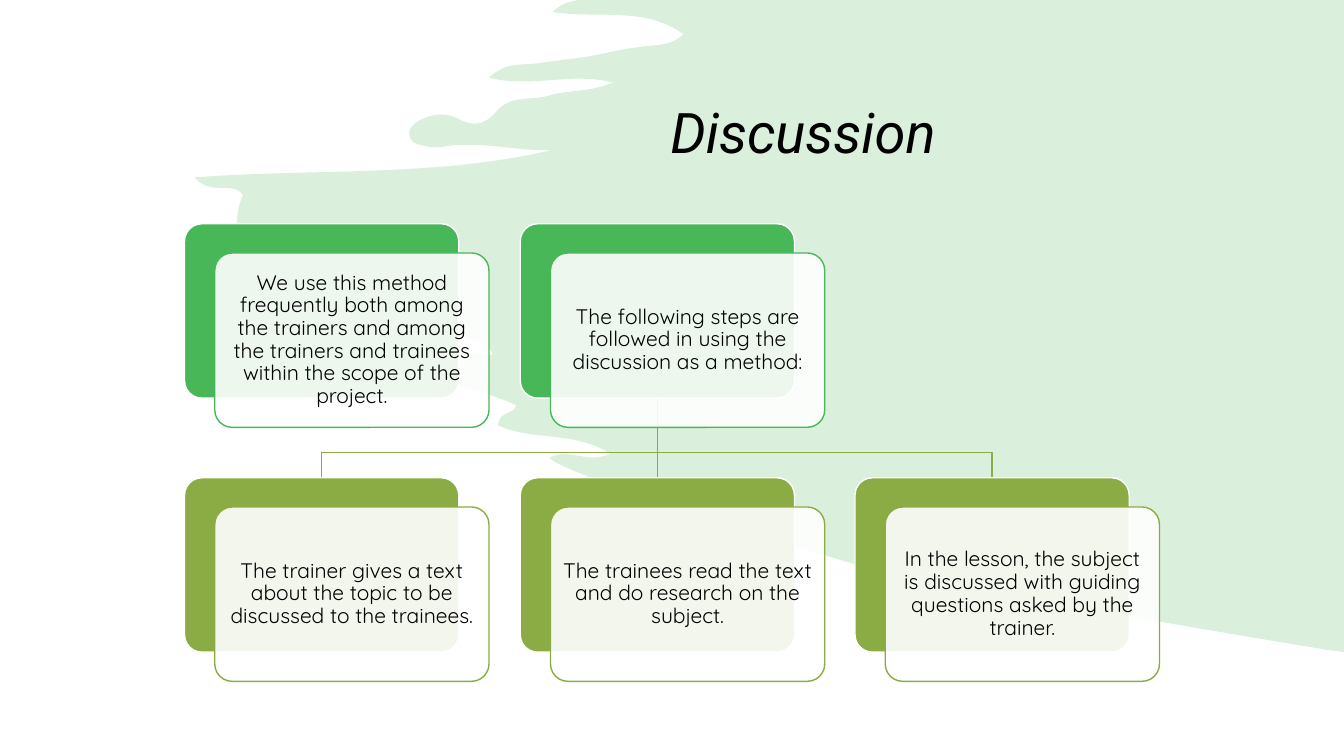
from lxml.etree import SubElement
from pptx import Presentation
from pptx.dml.color import RGBColor
from pptx.enum.shapes import MSO_SHAPE
from pptx.enum.text import MSO_ANCHOR, PP_ALIGN
from pptx.oxml.ns import qn
from pptx.util import Pt

PX = 9144
SLIDE_W, SLIDE_H = 1333, 750
GREEN, OLIVE, WHITE, BLACK = "48B758", "8BAC44", "FFFFFF", "000000"

TITLE = "Discussion"
TITLE_BOX = (655, 31, 586, 207)
ROWS = [
    (222, GREEN, [
        "We use this method frequently both among the trainers and among "
        "the trainers and trainees within the scope of the project.",
        "The following steps are followed in using the discussion as a method:",
    ]),
    (474, OLIVE, [
        "The trainer gives a text about the topic to be discussed to the trainees.",
        "The trainees read the text and do research on the subject.",
        "In the lesson, the subject is discussed with guiding questions asked by the trainer.",
    ]),
]
CARD_LEFT, CARD_RIGHTMOST, CARD_W, CARD_H = 183, 848, 272, 173
FRONT_DX, FRONT_DY = 30, 29
BRANCH_TOP, BRANCH_BEND, TRUNK_PAD = 395, 449, 5

BRUSH_START = (575, 0)
BRUSH_CURVES = [
    (567, 1, 557, 3, 548, 12), (595, 19, 639, 6, 678, 34),
    (664, 47, 648, 44, 632, 47), (616, 49, 600, 53, 584, 56),
    (567, 59, 549, 60, 532, 63), (518, 65, 502, 61, 485, 77),
    (527, 88, 566, 71, 608, 82), (584, 92, 563, 89, 544, 95),
    (527, 100, 506, 94, 492, 111), (481, 124, 469, 126, 455, 118),
    (442, 111, 428, 113, 415, 120), (411, 123, 406, 126, 406, 132),
    (406, 141, 412, 143, 418, 144), (424, 146, 431, 147, 437, 146),
    (474, 139, 510, 150, 547, 149), (431, 176, 314, 167, 193, 176),
    (209, 195, 229, 179, 241, 193), (230, 222, 234, 237, 258, 239),
    (280, 241, 304, 231, 316, 265), (320, 276, 341, 273, 355, 275),
    (384, 279, 414, 275, 442, 288), (453, 293, 460, 297, 455, 311),
    (449, 325, 456, 330, 466, 336), (473, 340, 483, 339, 489, 352),
    (428, 350, 369, 340, 309, 350), (375, 374, 447, 373, 512, 402),
    (510, 412, 495, 407, 494, 422), (528, 438, 569, 427, 605, 450),
    (584, 461, 565, 444, 545, 454), (552, 469, 840, 561, 892, 571),
    (978, 587, 1195, 625, 1318, 645),
]
BRUSH_END = [(SLIDE_W, 647), (SLIDE_W, 0)]


def rgb(value):
    return RGBColor.from_string(value)


def emu(*lengths):
    return [length * PX for length in lengths]


def set_all(target, values):
    for name, value in values.items():
        setattr(target, name, value)


def paint(shape, fill=None, opacity=100, line=None):
    shape.shadow.inherit = False
    if fill:
        shape.fill.solid()
        shape.fill.fore_color.rgb = rgb(fill)
        color = shape.fill._xPr.find(qn("a:solidFill"))[0]
        if opacity < 100:
            SubElement(color, qn("a:alpha"), val=str(opacity * 1000))
    else:
        shape.fill.background()
    if line:
        shape.line.color.rgb = rgb(line)
        shape.line.width = Pt(1)
    else:
        shape.line.fill.background()


def write(shape, text, font, size, inset_x, inset_y, align, italic=False):
    margin_x, margin_y = emu(inset_x, inset_y)
    set_all(shape.text_frame, {
        "word_wrap": True, "vertical_anchor": MSO_ANCHOR.MIDDLE,
        "margin_left": margin_x, "margin_right": margin_x,
        "margin_top": margin_y, "margin_bottom": margin_y,
    })
    paragraph = shape.text_frame.paragraphs[0]
    set_all(paragraph, {"alignment": align, "line_spacing": 0.9})
    run = paragraph.add_run()
    run.text = text
    set_all(run.font, {"name": font, "size": Pt(size), "italic": italic})
    run.font.color.rgb = rgb(BLACK)


def add_outline(shapes, points, close):
    corners = [tuple(emu(*point)) for point in points]
    builder = shapes.build_freeform(*corners[0], scale=1.0)
    builder.add_line_segments(corners[1:], close=close)
    return builder.convert_to_shape()


def add_brush(shapes):
    ends = [curve[4:] for curve in BRUSH_CURVES]
    brush = add_outline(shapes, [BRUSH_START, *ends, *BRUSH_END], True)
    segments = list(brush._element.iter(qn("a:lnTo")))
    for segment, curve in zip(segments, BRUSH_CURVES):
        segment.tag = qn("a:cubicBezTo")
        for point in list(segment):
            segment.remove(point)
        for x, y in zip(curve[::2], curve[1::2]):
            SubElement(segment, qn("a:pt"), x=str(x * PX - brush.left),
                       y=str(y * PX - brush.top))
    paint(brush, fill=GREEN, opacity=20)


def add_branch(shapes, trunk_x, leaf_x, leaf_y):
    bends = [(trunk_x, BRANCH_BEND), (leaf_x, BRANCH_BEND)] if leaf_x != trunk_x else []
    branch = add_outline(
        shapes, [(trunk_x, BRANCH_TOP), *bends, (leaf_x, leaf_y)], False)
    if not bends:
        pad = TRUNK_PAD * PX
        branch.left -= pad
        branch.width = 2 * pad
        for outline in branch._element.iter(qn("a:path")):
            outline.set("w", str(2 * pad))
            for point in outline.iter(qn("a:pt")):
                point.set("x", str(pad))
    paint(branch, line=OLIVE)


def add_panel(shapes, left, top):
    panel = shapes.add_shape(
        MSO_SHAPE.ROUNDED_RECTANGLE, *emu(left, top, CARD_W, CARD_H))
    panel.adjustments[0] = 0.1
    return panel


def add_card(shapes, left, top, color, text):
    paint(add_panel(shapes, left, top), fill=color, line=WHITE)
    front = add_panel(shapes, left + FRONT_DX, top + FRONT_DY)
    paint(front, fill=WHITE, opacity=90, line=color)
    write(front, text, "Quicksand", 15, 6, 6, PP_ALIGN.CENTER)


def main():
    deck = Presentation()
    deck.slide_width, deck.slide_height = emu(SLIDE_W, SLIDE_H)
    slide = deck.slides.add_slide(deck.slide_layouts[6])
    slide.background.fill.solid()
    slide.background.fill.fore_color.rgb = rgb(WHITE)
    shapes = slide.shapes

    add_brush(shapes)
    title = shapes.add_textbox(*emu(*TITLE_BOX))
    write(title, TITLE, "Roboto", 40, 10, 5, PP_ALIGN.LEFT, italic=True)

    span = CARD_RIGHTMOST - CARD_LEFT
    columns = [round(CARD_LEFT + span * column / 2) for column in range(3)]
    centers = [left + CARD_W // 2 for left in columns]
    for center in reversed(centers):
        add_branch(shapes, centers[1], center, ROWS[1][0])
    for top, color, texts in ROWS:
        for left, text in zip(columns, texts):
            add_card(shapes, left, top, color, text)

    deck.save("out.pptx")


if __name__ == "__main__":
    main()
